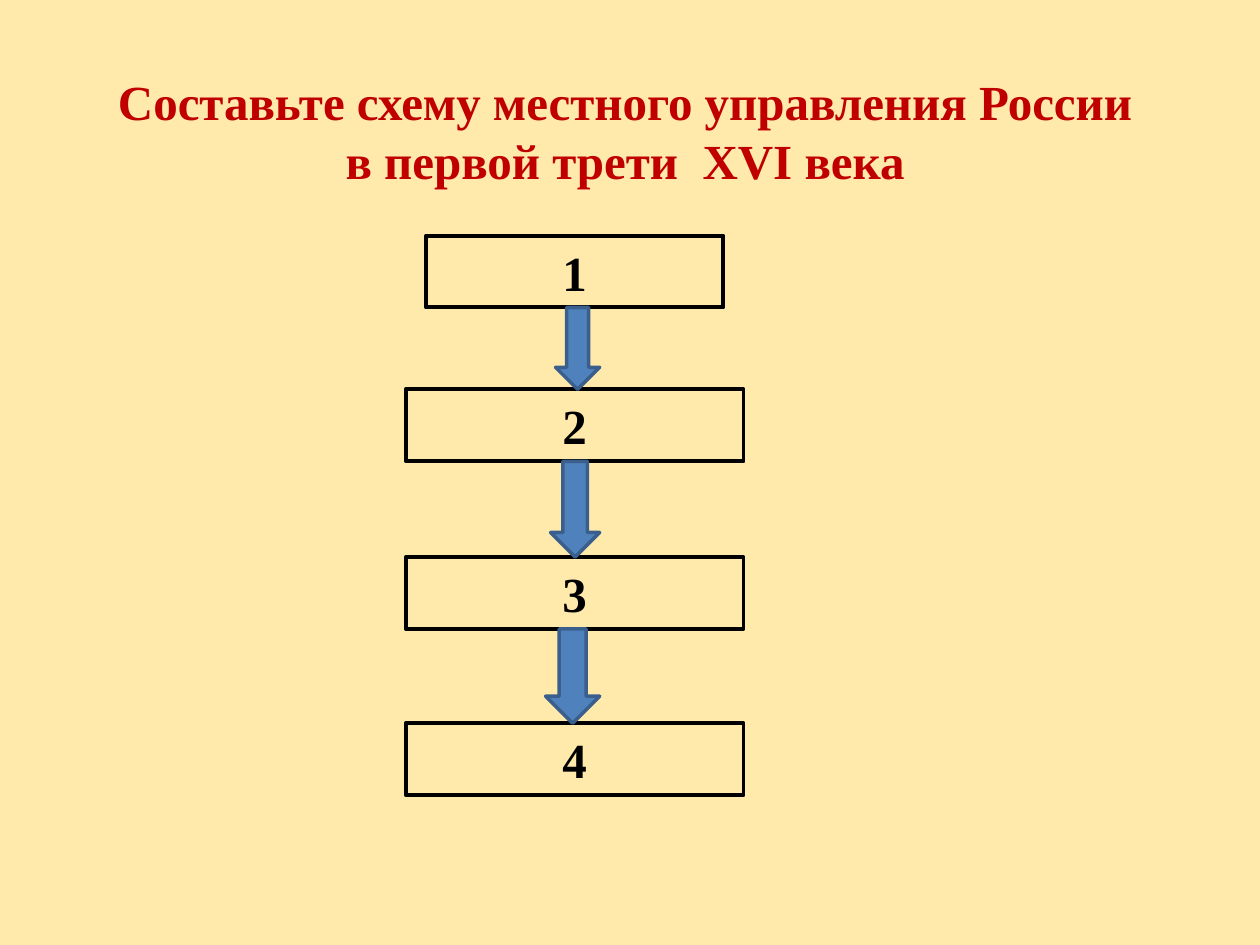
import dataclasses
import itertools

import pptx
import pptx.dml.color
import pptx.enum.shapes
import pptx.enum.text
import pptx.util
from pptx.util import Cm


@dataclasses.dataclass(frozen=True)
class Theme:
    """Colours and type sizes of the slide."""

    background: str = "FFEAAB"
    title: str = "C00000"
    ink: str = "000000"
    arrow_fill: str = "4F81BD"
    arrow_line: str = "3A5F8C"
    font: str = "Times New Roman"
    size: float = 28
    box_line: float = 2.25
    arrow_line_width: float = 2


@dataclasses.dataclass(frozen=True)
class Box:
    """A region in centimetres."""

    left: float
    top: float
    width: float
    height: float


@dataclasses.dataclass(frozen=True)
class Step:
    """A level of the scheme: its label, offset from the top and width."""

    label: str
    offset: float
    width: float


THEME = Theme()
TITLE = "Составьте схему местного управления России\nв первой трети  XVI века"
STEPS = [
    Step("1", 0, 6),
    Step("2", 3.1, 6.81),
    Step("3", 6.48, 6.81),
    Step("4", 9.83, 6.81),
]
STEP_HEIGHT = 1.45
ARROW_RIGHT = 3.91
ARROW_WIDTHS = [0.89, 0.99, 1.09]


def rgb(code):
    """Return the colour for a hexadecimal code."""
    return pptx.dml.color.RGBColor.from_string(code)


def format_text(text_frame, color):
    """Centre the text and set it in the bold theme font."""
    text_frame.word_wrap = True
    text_frame.auto_size = pptx.enum.text.MSO_AUTO_SIZE.NONE
    for paragraph in text_frame.paragraphs:
        paragraph.alignment = pptx.enum.text.PP_ALIGN.CENTER
        for run in paragraph.runs:
            run.font.name = THEME.font
            run.font.size = pptx.util.Pt(THEME.size)
            run.font.bold = True
            run.font.color.rgb = rgb(color)


def add_outlined_shape(slide, kind, box, line_color, line_width):
    """Add a preset shape without shadow in the given box."""
    shape = slide.shapes.add_shape(
        kind, Cm(box.left), Cm(box.top), Cm(box.width), Cm(box.height)
    )
    shape.shadow.inherit = False
    shape.line.color.rgb = rgb(line_color)
    shape.line.width = pptx.util.Pt(line_width)
    return shape


def add_title(slide, box):
    """Place the title placeholder in the box."""
    title = slide.shapes.title
    title.left, title.top = Cm(box.left), Cm(box.top)
    title.width, title.height = Cm(box.width), Cm(box.height)
    title.text_frame.text = TITLE
    title.text_frame.vertical_anchor = pptx.enum.text.MSO_ANCHOR.TOP
    format_text(title.text_frame, THEME.title)


def add_scheme(slide, box):
    """Stack the numbered levels in the box and join them with arrows."""
    kinds = pptx.enum.shapes.MSO_SHAPE
    for step in STEPS:
        place = Box(
            box.left + (box.width - step.width) / 2,
            box.top + step.offset,
            step.width,
            STEP_HEIGHT,
        )
        level = add_outlined_shape(
            slide, kinds.RECTANGLE, place, THEME.ink, THEME.box_line
        )
        level.fill.background()
        level.text_frame.text = step.label
        format_text(level.text_frame, THEME.ink)

    for (upper, lower), width in zip(itertools.pairwise(STEPS), ARROW_WIDTHS):
        start = upper.offset + STEP_HEIGHT
        place = Box(
            box.left + ARROW_RIGHT - width,
            box.top + start,
            width,
            lower.offset - start,
        )
        arrow = add_outlined_shape(
            slide, kinds.DOWN_ARROW, place, THEME.arrow_line, THEME.arrow_line_width
        )
        arrow.fill.solid()
        arrow.fill.fore_color.rgb = rgb(THEME.arrow_fill)


def main():
    """Build and save the presentation."""
    presentation = pptx.Presentation()
    presentation.slide_width = Cm(25.4)
    presentation.slide_height = Cm(19.05)
    slide = presentation.slides.add_slide(presentation.slide_layouts[5])
    slide.background.fill.solid()
    slide.background.fill.fore_color.rgb = rgb(THEME.background)
    add_title(slide, Box(1.3, 1.32, 22.6, 2.64))
    add_scheme(slide, Box(8.18, 4.75, 6.81, 11.28))
    presentation.save("out.pptx")


if __name__ == "__main__":
    main()
